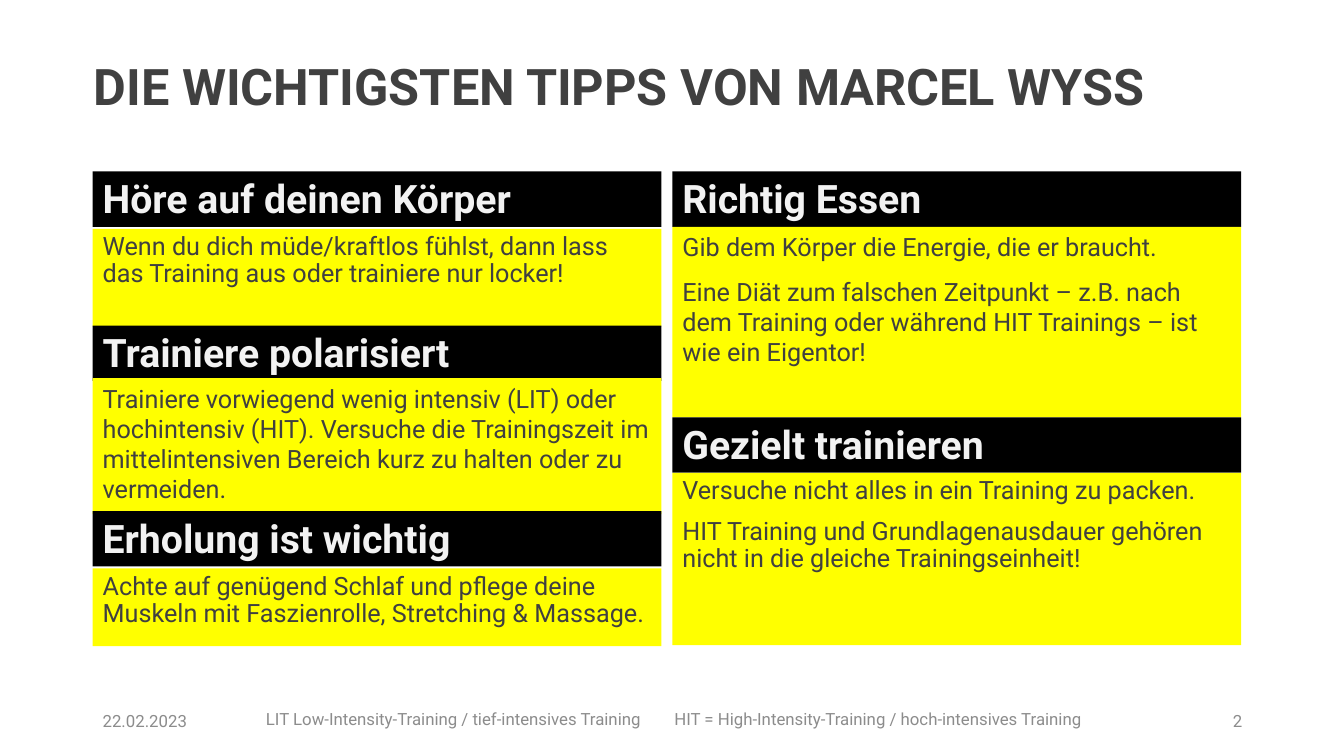
import pptx
import pptx.util
import pptx.dml.color
import pptx.enum.shapes
import pptx.enum.text

Inches = pptx.util.Inches
Anchor = pptx.enum.text.MSO_ANCHOR
Align = pptx.enum.text.PP_ALIGN

FONT = "Roboto"
DARK, LIGHT, GREY = "404040", "F2F2F2", "8C8C8C"
BLACK, YELLOW = "000000", "FFFF00"

TITLE = "DIE WICHTIGSTEN TIPPS VON MARCEL WYSS"
COLUMN_LEFTS = (0.92, 6.67)
COLUMN_WIDTH = 5.64
HEADING_HEIGHT = 0.55

# column, heading top, heading, body top, body height, line spacing, paragraphs
TIPS = [
    (0, 1.7, "Höre auf deinen Körper", 2.27, 0.97, 0.9,
     ["Wenn du dich müde/kraftlos fühlst, dann lass das Training aus oder trainiere nur locker!"]),
    (0, 3.23, "Trainiere polarisiert", 3.75, 1.35, 1.0,
     ["Trainiere vorwiegend wenig intensiv (LIT) oder hochintensiv (HIT). Versuche die "
      "Trainingszeit im mittelintensiven Bereich kurz zu halten oder zu vermeiden."]),
    (0, 5.07, "Erholung ist wichtig", 5.64, 0.77, 0.9,
     ["Achte auf genügend Schlaf und pflege deine Muskeln mit Faszienrolle, Stretching & Massage."]),
    (1, 1.7, "Richtig Essen", 2.25, 1.89, 1.0,
     ["Gib dem Körper die Energie, die er braucht.",
      "Eine Diät zum falschen Zeitpunkt – z.B. nach dem Training oder während HIT Trainings "
      "– ist wie ein Eigentor!"]),
    (1, 4.14, "Gezielt trainieren", 4.69, 1.71, 0.9,
     ["Versuche nicht alles in ein Training zu packen.",
      "HIT Training und Grundlagenausdauer gehören nicht in die gleiche Trainingseinheit!"]),
]

FOOTERS = [
    (0.92, 6.95, 1.5, "22.02.2023", Align.LEFT),
    (2.54, 6.93, 4.0, "LIT Low-Intensity-Training / tief-intensives Training", Align.LEFT),
    (6.59, 6.93, 4.33, "HIT = High-Intensity-Training / hoch-intensives Training", Align.LEFT),
    (11.42, 6.95, 1.0, "2", Align.RIGHT),
]


def color(value):
    return pptx.dml.color.RGBColor.from_string(value)


def write(shape, texts, size, text_color, bold=False, anchor=Anchor.MIDDLE,
          align=Align.LEFT, spacing=1.0):
    frame = shape.text_frame
    frame.word_wrap = True
    frame.auto_size = pptx.enum.text.MSO_AUTO_SIZE.NONE
    frame.vertical_anchor = anchor
    for index, text in enumerate(texts):
        paragraph = frame.add_paragraph() if index else frame.paragraphs[0]
        paragraph.alignment = align
        paragraph.line_spacing = spacing
        paragraph.space_before = pptx.util.Pt(10 if index else 0)
        run = paragraph.add_run()
        run.text = text
        run.font.name = FONT
        run.font.size = pptx.util.Pt(size)
        run.font.bold = bold
        run.font.color.rgb = color(text_color)


def add_panel(slide, left, top, height, fill):
    shape = slide.shapes.add_shape(
        pptx.enum.shapes.MSO_SHAPE.RECTANGLE,
        Inches(left), Inches(top), Inches(COLUMN_WIDTH), Inches(height))
    shape.shadow.inherit = False
    shape.fill.solid()
    shape.fill.fore_color.rgb = color(fill)
    shape.line.fill.background()
    return shape


def main():
    presentation = pptx.Presentation()
    presentation.slide_width = Inches(13.33)
    presentation.slide_height = Inches(7.5)
    slide = presentation.slides.add_slide(presentation.slide_layouts[5])

    title = slide.shapes.title
    title.left, title.top = Inches(0.83), Inches(0.25)
    title.width, title.height = Inches(11.5), Inches(1.27)
    write(title, [TITLE], 36, DARK, bold=True, spacing=0.9)

    for column, top, heading, body_top, body_height, spacing, texts in TIPS:
        left = COLUMN_LEFTS[column]
        header = add_panel(slide, left, top, HEADING_HEIGHT, BLACK)
        write(header, [heading], 28, LIGHT, bold=True, anchor=Anchor.BOTTOM, spacing=0.9)
        body = add_panel(slide, left, body_top, body_height, YELLOW)
        write(body, texts, 18, DARK, anchor=Anchor.TOP, spacing=spacing)

    for left, top, width, text, align in FOOTERS:
        box = slide.shapes.add_textbox(Inches(left), Inches(top), Inches(width), Inches(0.4))
        write(box, [text], 12, GREY, align=align)

    presentation.save("out.pptx")


if __name__ == "__main__":
    main()
